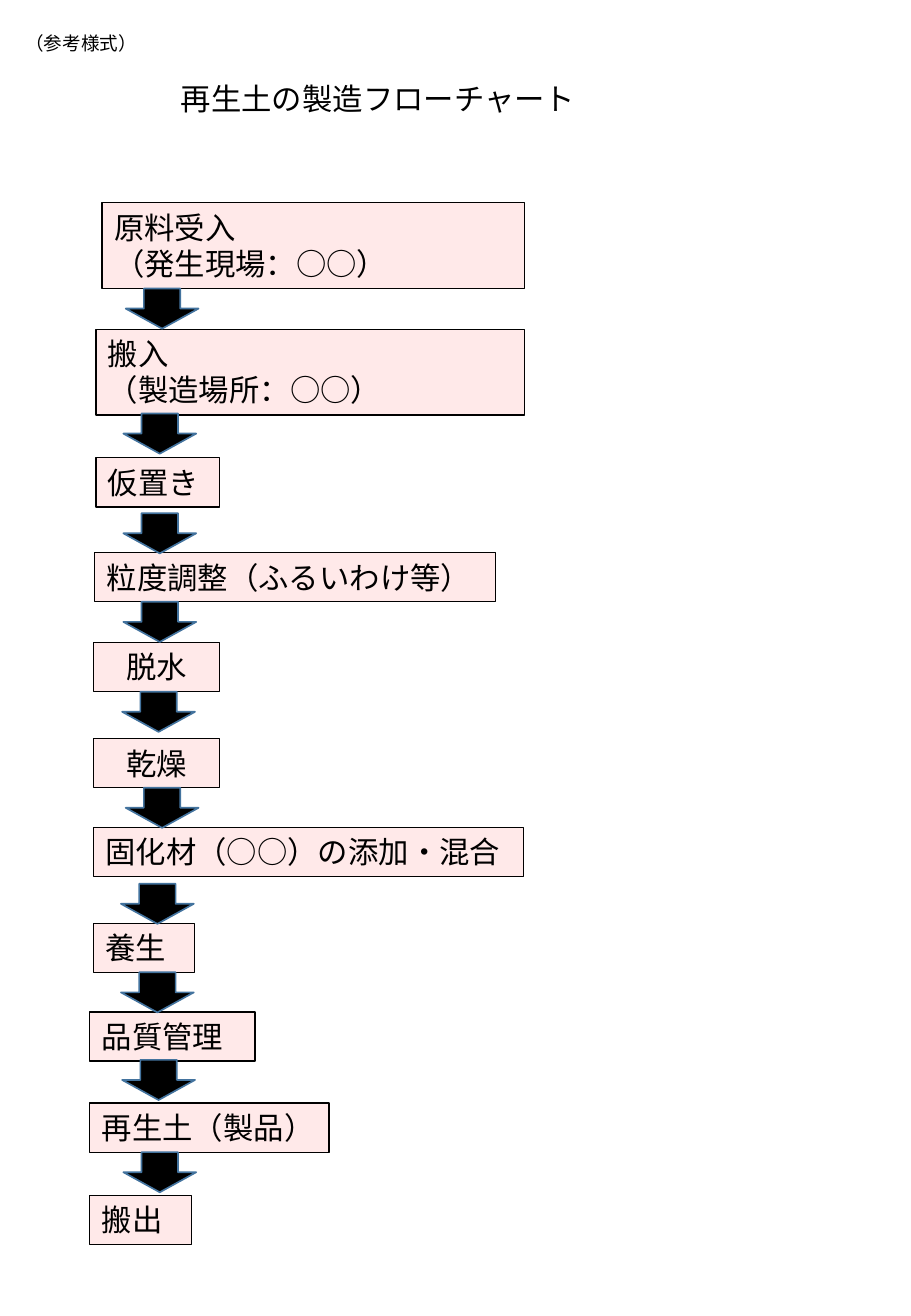
from dataclasses import dataclass
from lxml.etree import SubElement
from pptx import Presentation
from pptx.dml.color import RGBColor
from pptx.enum.shapes import MSO_SHAPE
from pptx.enum.text import MSO_ANCHOR, MSO_AUTO_SIZE, PP_ALIGN
from pptx.oxml.ns import qn
from pptx.util import Pt


@dataclass(frozen=True)
class Theme:
    font: str = "Noto Sans CJK JP"
    ink: RGBColor = RGBColor(0, 0, 0)
    box_fill: RGBColor = RGBColor(0xFF, 0xE9, 0xE9)
    arrow_line: RGBColor = RGBColor(0x43, 0x73, 0x9E)
    body_size: float = 18
    note_size: float = 11


class FlowChart:
    def __init__(self, slide, theme):
        self.slide = slide
        self.theme = theme

    def set_text(self, shape, text, size, align=PP_ALIGN.LEFT):
        frame = shape.text_frame
        frame.word_wrap = True
        frame.auto_size = MSO_AUTO_SIZE.SHAPE_TO_FIT_TEXT
        frame.vertical_anchor = MSO_ANCHOR.TOP
        frame.text = text
        for paragraph in frame.paragraphs:
            paragraph.alignment = align
            paragraph.font.size = Pt(size)
            paragraph.font.name = self.theme.font
            paragraph.font.color.rgb = self.theme.ink
            east_asian = SubElement(paragraph._p.pPr.defRPr, qn("a:ea"))
            east_asian.set("typeface", self.theme.font)

    def label(self, left, top, width, height, text, size):
        shape = self.slide.shapes.add_textbox(Pt(left), Pt(top), Pt(width), Pt(height))
        self.set_text(shape, text, size)

    def block(self, kind, left, top, width, height, fill, line, line_width):
        shape = self.slide.shapes.add_shape(kind, Pt(left), Pt(top), Pt(width), Pt(height))
        shape.shadow.inherit = False
        shape.fill.solid()
        shape.fill.fore_color.rgb = fill
        shape.line.color.rgb = line
        shape.line.width = Pt(line_width)
        return shape

    def step(self, left, top, width, text, align=PP_ALIGN.LEFT):
        height = 29.1 + 21.8 * text.count("\n")
        shape = self.block(MSO_SHAPE.RECTANGLE, left, top, width, height,
                           self.theme.box_fill, self.theme.ink, 0.75)
        self.set_text(shape, text, self.theme.body_size, align)

    def arrow(self, left, top):
        shape = self.block(MSO_SHAPE.RIGHT_ARROW, left, top, 23.8, 43.2,
                           self.theme.ink, self.theme.arrow_line, 1)
        shape.rotation = 90


STEPS = [
    (60.5, 120.2, 250.6, "原料受入\n（発生現場：○○）"),
    (56.9, 195.1, 254.2, "搬入\n（製造場所：○○）"),
    (56.9, 271.4, 73.4, "仮置き"),
    (56.2, 327.6, 237.6, "粒度調整（ふるいわけ等）"),
    (55.4, 380.9, 74.9, "脱水", PP_ALIGN.CENTER),
    (55.4, 437.8, 74.9, "乾燥", PP_ALIGN.CENTER),
    (55.4, 490.3, 254.9, "固化材（○○）の添加・混合"),
    (55.4, 547.2, 59.8, "養生"),
    (53.3, 599.8, 97.9, "品質管理"),
    (53.3, 653.8, 141.8, "再生土（製品）"),
    (53.3, 708.5, 60.5, "搬出"),
]
ARROWS = [
    (84.2, 161.3), (82.8, 235.4), (82.8, 294.5), (82.8, 347), (82.1, 400.3),
    (84.2, 457.2), (81.4, 514.1), (81.4, 566.6), (82.1, 618.5), (82.8, 673.2),
]


def main():
    presentation = Presentation()
    presentation.slide_width = Pt(540)
    presentation.slide_height = Pt(780)
    theme = Theme()
    chart = FlowChart(presentation.slides.add_slide(presentation.slide_layouts[6]), theme)
    chart.label(7.9, 15.1, 123.1, 20.6, "（参考様式）", theme.note_size)
    chart.label(100.1, 43.9, 351.4, 29.1, "再生土の製造フローチャート", theme.body_size)
    for step in STEPS:
        chart.step(*step)
    for arrow in ARROWS:
        chart.arrow(*arrow)
    presentation.save("out.pptx")


if __name__ == "__main__":
    main()
